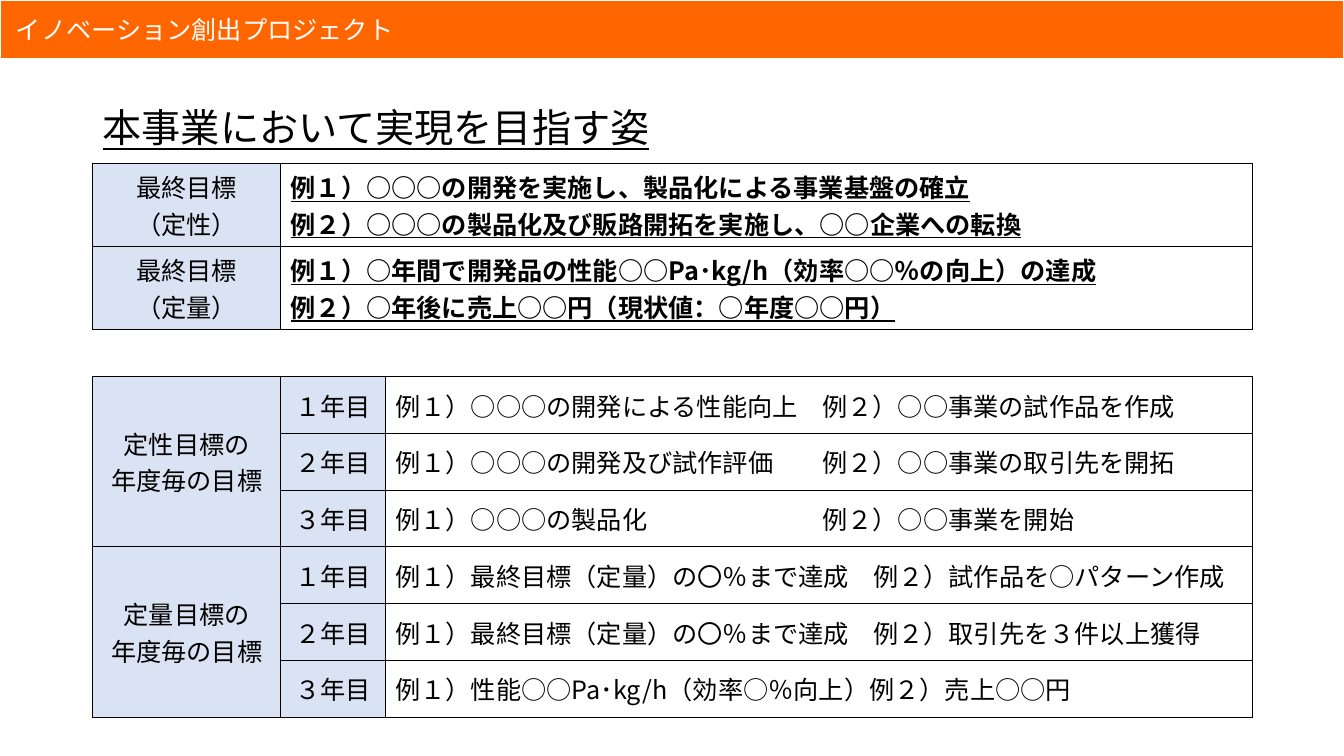
import pptx
import pptx.util
import pptx.dml.color
import pptx.enum.shapes
import pptx.enum.text
import pptx.oxml
import pptx.oxml.ns

Cm, Pt = pptx.util.Cm, pptx.util.Pt
RGBColor = pptx.dml.color.RGBColor
PP_ALIGN = pptx.enum.text.PP_ALIGN
MIDDLE = pptx.enum.text.MSO_ANCHOR.MIDDLE
qn = pptx.oxml.ns.qn

ORANGE = RGBColor(0xFF, 0x66, 0x00)
PALE_BLUE = RGBColor(0xDA, 0xE3, 0xF3)
WHITE = RGBColor(0xFF, 0xFF, 0xFF)
BLACK = RGBColor(0, 0, 0)
FONT = "Noto Sans CJK JP"
NS = 'xmlns:a="http://schemas.openxmlformats.org/drawingml/2006/main"'


def write(tf, text, size=18, color=BLACK, align=PP_ALIGN.LEFT, bold=False, underline=False):
    tf.text = text
    for p in tf.paragraphs:
        p.alignment = align
        for r in p.runs:
            r.font.size, r.font.name = Pt(size), FONT
            r.font.color.rgb = color
            r.font.bold, r.font.underline = bold, underline
            ea = r.font._element.makeelement(qn("a:ea"), {"typeface": FONT})
            r.font._element.find(qn("a:latin")).addnext(ea)


def set_borders(cell, sides):
    """Draw black lines on the given sides (L, R, T, B) and none on the others."""
    tc_pr = cell._tc.get_or_add_tcPr()
    for i, side in enumerate("LRTB"):
        paint = '<a:solidFill><a:srgbClr val="000000"/></a:solidFill>' if side in sides else "<a:noFill/>"
        tc_pr.insert(i, pptx.oxml.parse_xml(f'<a:ln{side} {NS} w="12700">{paint}</a:ln{side}>'))


prs = pptx.Presentation()
prs.slide_width, prs.slide_height = Cm(33.87), Cm(19.05)
s = prs.slides.add_slide(prs.slide_layouts[6])

# Header bar
bar = s.shapes.add_shape(pptx.enum.shapes.MSO_SHAPE.RECTANGLE, 0, 0, prs.slide_width, Cm(1.5))
bar.shadow.inherit = False
bar.fill.solid()
bar.fill.fore_color.rgb = ORANGE
bar.line.color.rgb = WHITE
bar.line.width = Pt(1.5)
bar.text_frame.margin_left = Cm(0.4)
bar.text_frame.vertical_anchor = MIDDLE
write(bar.text_frame, "イノベーション創出プロジェクト", color=WHITE)

# Title
title = s.shapes.add_textbox(Cm(2.34), Cm(1.88), Cm(29.2), Cm(2.8))
tf = title.text_frame
tf.word_wrap = True
tf.vertical_anchor = MIDDLE
write(tf, "本事業において実現を目指す姿", size=28, underline=True)
tf.paragraphs[0].line_spacing = 0.9

# Goals table: final goals, a gap row, then yearly goals
final_goals = [
    ("最終目標\n（定性）",
     "例１）○○○の開発を実施し、製品化による事業基盤の確立\n"
     "例２）○○○の製品化及び販路開拓を実施し、○○企業への転換"),
    ("最終目標\n（定量）",
     "例１）○年間で開発品の性能○○Pa･kg/h（効率○○％の向上）の達成\n"
     "例２）○年後に売上○○円（現状値：○年度○○円）"),
]
# Each group: heading, tab position of the second example, one line per year
yearly_goals = [
    ("定性目標の\n年度毎の目標", 10.76, [
        "例１）○○○の開発による性能向上\t例２）○○事業の試作品を作成",
        "例１）○○○の開発及び試作評価\t例２）○○事業の取引先を開拓",
        "例１）○○○の製品化\t例２）○○事業を開始"]),
    ("定量目標の\n年度毎の目標", 12.04, [
        "例１）最終目標（定量）の〇％まで達成\t例２）試作品を○パターン作成",
        "例１）最終目標（定量）の〇％まで達成\t例２）取引先を３件以上獲得",
        "例１）性能○○Pa･kg/h（効率○％向上）例２）売上○○円"]),
]
GAP_ROW = len(final_goals)
col_widths = [4.73, 2.64, 21.86]
row_heights = [2.1] * 2 + [1.18] + [1.43] * 6

table = s.shapes.add_table(len(row_heights), len(col_widths), Cm(2.34), Cm(4.11),
                           Cm(sum(col_widths)), Cm(sum(row_heights))).table
table.first_row = table.horz_banding = False
for column, width in zip(table.columns, col_widths):
    column.width = Cm(width)
for row, height in zip(table.rows, row_heights):
    row.height = Cm(height)

for i in range(len(row_heights)):
    for j in range(len(col_widths)):
        cell = table.cell(i, j)
        cell.vertical_anchor = MIDDLE
        if j == 0 and i != GAP_ROW or j == 1 and i > GAP_ROW:
            cell.fill.solid()
            cell.fill.fore_color.rgb = PALE_BLUE
        else:
            cell.fill.background()
        set_borders(cell, "TB" if i == GAP_ROW else "LRTB")
    if i <= GAP_ROW:
        table.cell(i, 1).merge(table.cell(i, 2))

for i, (heading, examples) in enumerate(final_goals):
    write(table.cell(i, 0).text_frame, heading, align=PP_ALIGN.CENTER)
    write(table.cell(i, 1).text_frame, examples, bold=True, underline=True)

for g, (heading, tab, goals) in enumerate(yearly_goals):
    top = GAP_ROW + 1 + g * len(goals)
    table.cell(top, 0).merge(table.cell(top + len(goals) - 1, 0))
    write(table.cell(top, 0).text_frame, heading, align=PP_ALIGN.CENTER)
    for i, (year, goal) in enumerate(zip("１２３", goals), top):
        write(table.cell(i, 1).text_frame, f"{year}年目", align=PP_ALIGN.CENTER)
        tf = table.cell(i, 2).text_frame
        write(tf, goal)
        if "\t" in goal:
            tf.paragraphs[0]._p.get_or_add_pPr().append(pptx.oxml.parse_xml(
                f'<a:tabLst {NS}><a:tab pos="{Cm(tab)}" algn="l"/></a:tabLst>'))

prs.save("out.pptx")
